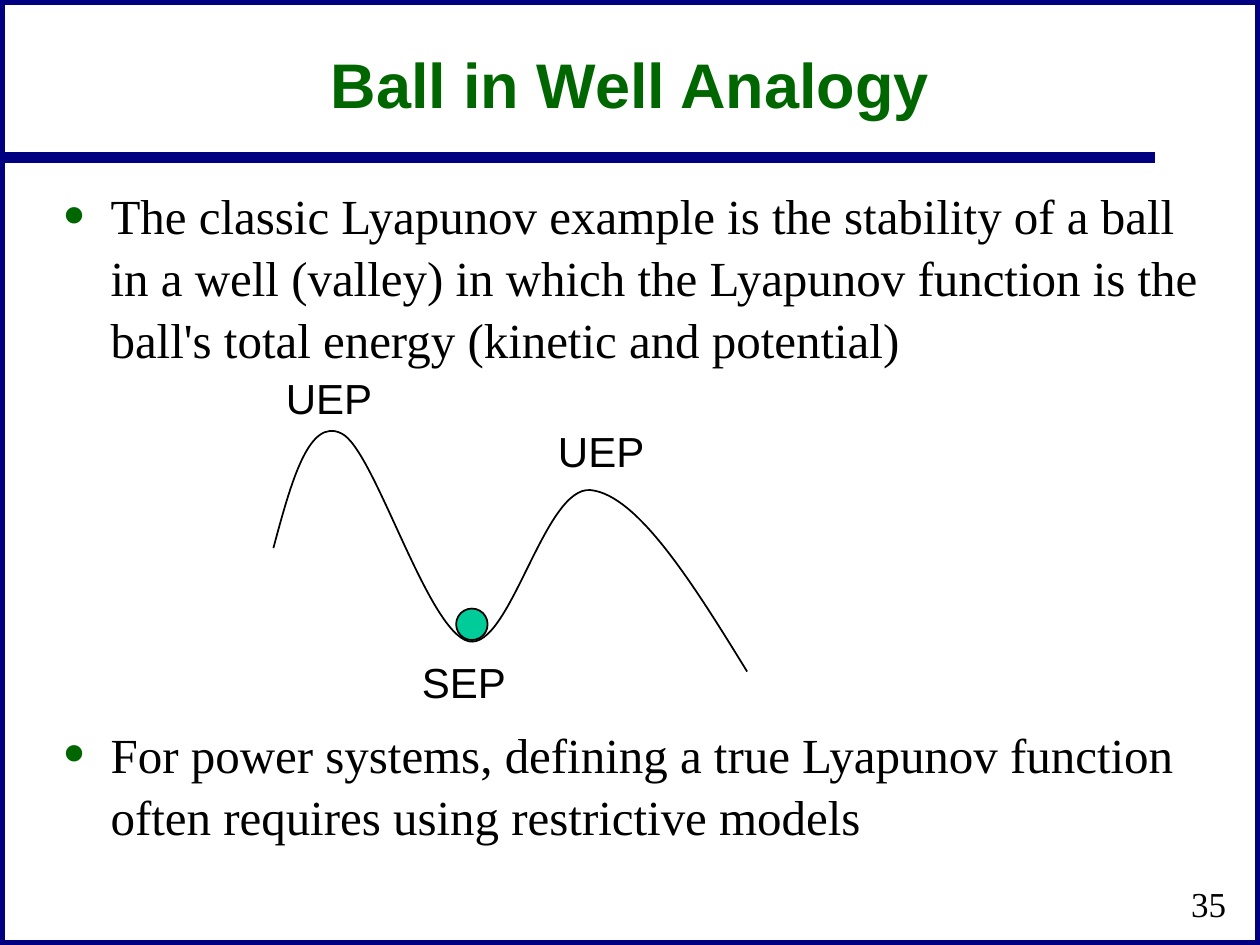
from dataclasses import dataclass
from lxml.etree import SubElement
from pptx import Presentation
from pptx.dml.color import RGBColor
from pptx.enum.shapes import MSO_CONNECTOR, MSO_SHAPE
from pptx.enum.text import MSO_ANCHOR, PP_ALIGN
from pptx.oxml.ns import qn
from pptx.util import Inches, Pt


@dataclass(frozen=True)
class Theme:
    navy: RGBColor = RGBColor(0x00, 0x00, 0x80)
    green: RGBColor = RGBColor(0x00, 0x66, 0x00)
    teal: RGBColor = RGBColor(0x00, 0xCC, 0x99)
    black: RGBColor = RGBColor(0x00, 0x00, 0x00)
    sans: str = "Arial"
    serif: str = "Times New Roman"
    title: int = 36
    body: int = 28
    label: int = 24
    number: int = 20
    rule: int = 6
    thin: int = 1


THEME = Theme()

BULLETS = [
    ("The classic Lyapunov example is the stability of a ball in a well (valley) "
     "in which the Lyapunov function is the ball's total energy (kinetic and potential)", 0),
    ("For power systems, defining a true Lyapunov function often requires using "
     "restrictive models", 202),
]
LABELS = [("SEP", 3.25, 5.16), ("UEP", 4.33, 3.33), ("UEP", 2.17, 2.91)]
HILLS = [
    (2.17, 4.35),
    (2.31, 3.83), (2.45, 3.31), (2.71, 3.44),
    (2.97, 3.56), (3.39, 5.01), (3.72, 5.09),
    (4.05, 5.16), (4.32, 3.85), (4.69, 3.89),
    (5.06, 3.93), (5.50, 4.63), (5.93, 5.33),
]


def style_font(font, name, size, color, bold=False):
    font.name = name
    font.size = Pt(size)
    font.color.rgb = color
    font.bold = bold


def style_line(sp, color, width):
    sp.line.color.rgb = color
    sp.line.width = Pt(width)


def place(sp, left, top, width, height):
    sp.left, sp.top = Inches(left), Inches(top)
    sp.width, sp.height = Inches(width), Inches(height)


def add_title(s, text):
    sp = s.shapes.title
    place(sp, 0.75, 0.25, 8.5, 0.83)
    tf = sp.text_frame
    tf.text = text
    tf.vertical_anchor = MSO_ANCHOR.MIDDLE
    p = tf.paragraphs[0]
    p.alignment = PP_ALIGN.CENTER
    style_font(p.runs[0].font, THEME.sans, THEME.title, THEME.green, bold=True)


def add_shape(s, kind, box, line, width, fill=None):
    sp = s.shapes.add_shape(kind, *map(Inches, box))
    sp.shadow.inherit = False
    if fill is None:
        sp.fill.background()
    else:
        sp.fill.solid()
        sp.fill.fore_color.rgb = fill
    style_line(sp, line, width)


def add_rule(s, x1, x2, y):
    sp = s.shapes.add_connector(MSO_CONNECTOR.STRAIGHT, *map(Inches, (x1, y, x2, y)))
    style_line(sp, THEME.navy, THEME.rule)
    SubElement(sp._element.spPr, qn("a:effectLst"))


def add_text(s, text, box, font, size, align=PP_ALIGN.LEFT, anchor=MSO_ANCHOR.TOP):
    tf = s.shapes.add_textbox(*map(Inches, box)).text_frame
    tf.word_wrap = True
    tf.vertical_anchor = anchor
    tf.text = text
    p = tf.paragraphs[0]
    p.alignment = align
    style_font(p.runs[0].font, font, size, THEME.black)


def set_bullet(p):
    pPr = p._p.get_or_add_pPr()
    pPr.set("marL", str(Inches(0.38)))
    pPr.set("indent", str(-Inches(0.38)))
    color = SubElement(pPr, qn("a:buClr"))
    SubElement(color, qn("a:srgbClr"), val=str(THEME.green))
    SubElement(pPr, qn("a:buSzPct"), val="140000")
    SubElement(pPr, qn("a:buFont"), typeface=THEME.serif)
    SubElement(pPr, qn("a:buChar"), char="•")


def add_bullets(s, items, box):
    tf = s.shapes.add_textbox(*map(Inches, box)).text_frame
    tf.word_wrap = True
    for i, (text, gap) in enumerate(items):
        p = tf.add_paragraph() if i else tf.paragraphs[0]
        p.text = text
        set_bullet(p)
        p.line_spacing = 1.05
        p.space_before = Pt(gap)
        style_font(p.runs[0].font, THEME.serif, THEME.body, THEME.black)


def add_curve(s, points):
    start, *rest = [(Inches(x), Inches(y)) for x, y in points]
    builder = s.shapes.build_freeform(*start)
    builder.add_line_segments(rest, close=False)
    sp = builder.convert_to_shape()
    sp.shadow.inherit = False
    sp.fill.background()
    style_line(sp, THEME.black, THEME.thin)
    outline = next(sp._element.iter(qn("a:path")))
    segments = outline.findall(qn("a:lnTo"))
    for i in range(0, len(segments), 3):
        bezier = SubElement(outline, qn("a:cubicBezTo"))
        for segment in segments[i:i + 3]:
            bezier.append(segment[0])
            outline.remove(segment)


def main():
    prs = Presentation()
    prs.slide_width, prs.slide_height = Inches(10), Inches(7.5)
    s = prs.slides.add_slide(prs.slide_layouts[5])
    add_shape(s, MSO_SHAPE.RECTANGLE, (0, 0, 10, 7.5), THEME.navy, THEME.rule)
    add_rule(s, 0, 9.17, 1.25)
    add_title(s, "Ball in Well Analogy")
    add_bullets(s, BULLETS, (0.4, 1.4, 9.34, 5.3))
    add_text(s, "35", (7.75, 6.92, 2.08, 0.5), THEME.serif, THEME.number,
             PP_ALIGN.RIGHT, MSO_ANCHOR.MIDDLE)
    add_curve(s, HILLS)
    add_shape(s, MSO_SHAPE.OVAL, (3.62, 4.83, 0.25, 0.25), THEME.black, THEME.thin, THEME.teal)
    for text, left, top in LABELS:
        add_text(s, text, (left, top, 0.91, 0.5), THEME.sans, THEME.label)
    prs.save("out.pptx")


if __name__ == "__main__":
    main()
